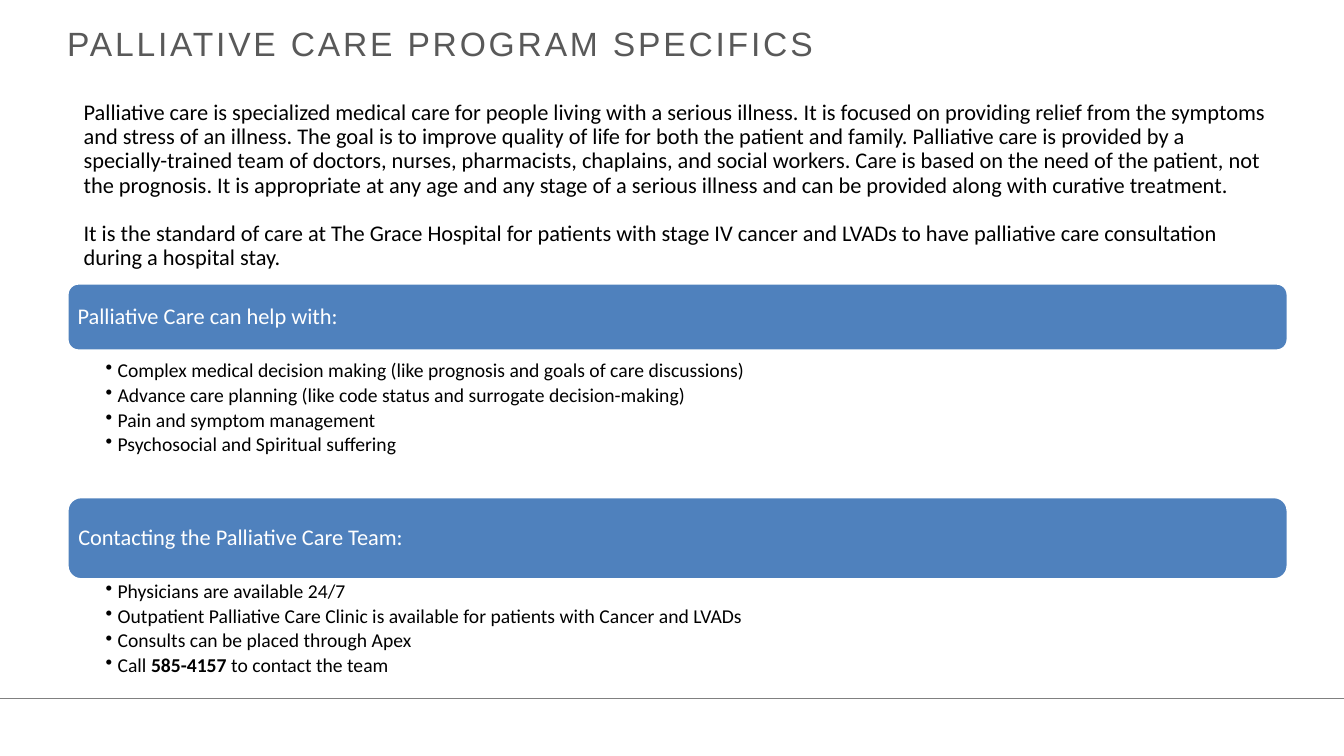
from dataclasses import dataclass

from lxml import etree
from pptx import Presentation
from pptx import util as u
from pptx.dml.color import RGBColor
from pptx.enum import shapes, text
from pptx.oxml.ns import qn

WIDTH, HEIGHT = u.Inches(13.33), u.Inches(7.5)
LEFT, SPAN = 5, 90.83  # columns shared by the title, bars and lists
BLUE, WHITE, BLACK, GREY, RULE = "4F81BD", "FFFFFF", "000000", "595959", "808080"


@dataclass
class Run:
    text: str
    bold: bool = False


@dataclass
class Section:
    heading: str
    bar_top: float
    bar_rows: float
    list_top: float
    list_rows: float
    items: list[list[Run]]


INTRO = [
    "Palliative care is specialized medical care for people living with a serious illness. "
    "It is focused on providing relief from the symptoms and stress of an illness. "
    "The goal is to improve quality of life for both the patient and family. "
    "Palliative care is provided by a specially-trained team of doctors, nurses, "
    "pharmacists, chaplains, and social workers. Care is based on the need of the patient, "
    "not the prognosis. It is appropriate at any age and any stage of a serious illness "
    "and can be provided along with curative treatment.",
    "It is the standard of care at The Grace Hospital for patients with stage IV cancer "
    "and LVADs to have palliative care consultation during a hospital stay.",
]

SECTIONS = [
    Section("Palliative Care can help with:", 37.47, 8.93, 47.47, 16.53, [
        [Run("Complex medical decision making (like prognosis and goals of care discussions)")],
        [Run("Advance care planning (like code status and surrogate decision-making)")],
        [Run("Pain and symptom management")],
        [Run("Psychosocial and Spiritual suffering")],
    ]),
    Section("Contacting the Palliative Care Team:", 65.73, 10.93, 76.67, 14.53, [
        [Run("Physicians are available 24/7")],
        [Run("Outpatient Palliative Care Clinic is available for patients with Cancer and LVADs")],
        [Run("Consults can be placed through Apex")],
        [Run("Call "), Run("585-4157", bold=True), Run(" to contact the team")],
    ]),
]


def rgb(value: str) -> RGBColor:
    return RGBColor.from_string(value)


def col(n: float) -> int:
    """Hundredths of the slide width."""
    return round(WIDTH * n / 100)


def row(n: float) -> int:
    """Hundredths of the slide height."""
    return round(HEIGHT * n / 100)


def set_frame(tf, insets: tuple, anchor=text.MSO_ANCHOR.MIDDLE) -> None:
    tf.word_wrap = True
    tf.vertical_anchor = anchor
    tf.margin_left, tf.margin_top, tf.margin_right, tf.margin_bottom = map(u.Inches, insets)


def add_paragraph(tf, runs: list[Run], size: float, color: str,
                  font: str = "Calibri", spacing: float = 0.9):
    first = tf.paragraphs[0]
    p = tf.add_paragraph() if first.runs else first
    p.alignment = text.PP_ALIGN.LEFT
    p.line_spacing = spacing
    for item in runs:
        r = p.add_run()
        r.text = item.text
        r.font.name, r.font.size, r.font.bold = font, u.Pt(size), item.bold
        r.font.color.rgb = rgb(color)
    return p


def add_bullet(p) -> None:
    pPr = p._p.get_or_add_pPr()
    pPr.set("marL", str(u.Inches(0.12)))
    pPr.set("indent", str(u.Inches(-0.12)))
    etree.SubElement(pPr, qn("a:buChar")).set("char", "•")


def add_rule(sp_tree) -> None:
    line = sp_tree.add_connector(shapes.MSO_CONNECTOR.STRAIGHT, 0, row(92.4), WIDTH, row(92.4))
    line.line.color.rgb = rgb(RULE)
    line.line.width = u.Pt(1)
    etree.SubElement(line._element.spPr, qn("a:effectLst"))


def add_title(sp_tree) -> None:
    tf = sp_tree.add_textbox(col(LEFT), row(2.67), col(90), row(6.13)).text_frame
    set_frame(tf, (0, 0, 0, 0))
    p = add_paragraph(tf, [Run("PALLIATIVE CARE PROGRAM SPECIFICS")], 24, GREY, "Arial", 1.0)
    p.runs[0].font._element.set("spc", "200")


def add_intro(sp_tree) -> None:
    tf = sp_tree.add_textbox(col(5.7), row(12.8), col(89.42), row(23.6)).text_frame
    set_frame(tf, (0.07,) * 4)
    for i, sentence in enumerate(INTRO):
        p = add_paragraph(tf, [Run(sentence)], 16, BLACK)
        if i:
            p.space_before = u.Pt(17.5)


def add_section(sp_tree, section: Section) -> None:
    # Heading bar
    bar = sp_tree.add_shape(shapes.MSO_SHAPE.ROUNDED_RECTANGLE, col(LEFT),
                            row(section.bar_top), col(SPAN), row(section.bar_rows))
    bar.shadow.inherit = False
    bar.fill.solid()
    bar.fill.fore_color.rgb = rgb(BLUE)
    bar.line.color.rgb = rgb(WHITE)
    bar.line.width = u.Pt(2)
    set_frame(bar.text_frame, (0.07,) * 4)
    add_paragraph(bar.text_frame, [Run(section.heading)], 16, WHITE)

    # Bulleted list
    tf = sp_tree.add_textbox(col(LEFT), row(section.list_top),
                             col(SPAN), row(section.list_rows)).text_frame
    set_frame(tf, (0.38, 0.02, 0.11, 0.02), text.MSO_ANCHOR.TOP)
    for runs in section.items:
        p = add_paragraph(tf, runs, 14, BLACK)
        p.space_after = u.Pt(2.5)
        add_bullet(p)


def main() -> None:
    prs = Presentation()
    prs.slide_width, prs.slide_height = WIDTH, HEIGHT
    s = prs.slides.add_slide(prs.slide_layouts[6])
    add_rule(s.shapes)
    add_title(s.shapes)
    add_intro(s.shapes)
    for section in SECTIONS:
        add_section(s.shapes, section)
    prs.save("out.pptx")


if __name__ == "__main__":
    main()
